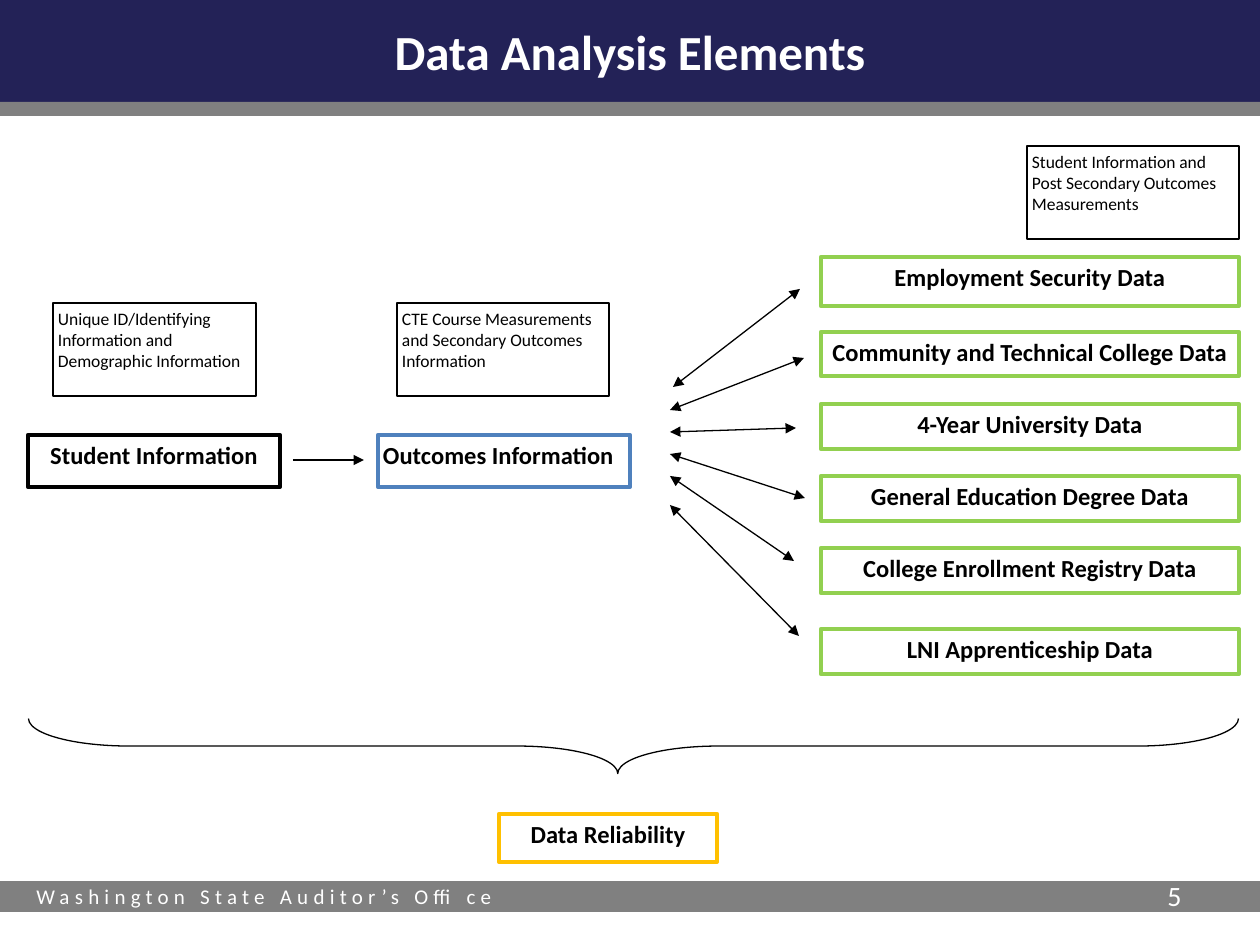
from pptx import Presentation
from pptx.dml.color import RGBColor
from pptx.enum.shapes import MSO_CONNECTOR, MSO_SHAPE
from pptx.enum.text import MSO_ANCHOR, PP_ALIGN
from pptx.oxml.ns import qn
from pptx.util import Pt
from lxml.etree import SubElement

SCALE = 914400 / 126
NAVY = RGBColor(0x23, 0x22, 0x57)
GRAY = RGBColor(0x80, 0x80, 0x80)
WHITE = RGBColor(0xFF, 0xFF, 0xFF)
BLACK = RGBColor(0x00, 0x00, 0x00)
BLUE = RGBColor(0x4F, 0x81, 0xBD)
AMBER = RGBColor(0xFF, 0xC0, 0x00)
GREEN = RGBColor(0x92, 0xD0, 0x50)
LEFT, CENTER = PP_ALIGN.LEFT, PP_ALIGN.CENTER

presentation = Presentation()
presentation.slide_width = round(1260 * SCALE)
presentation.slide_height = round(945 * SCALE)
slide = presentation.slides.add_slide(presentation.slide_layouts[6])


def add_box(bounds, fill=None, line=None, line_width=0.75, kind=MSO_SHAPE.RECTANGLE):
    shape = slide.shapes.add_shape(kind, *[round(value * SCALE) for value in bounds])
    shape.shadow.inherit = False
    if fill is None:
        shape.fill.background()
    else:
        shape.fill.solid()
        shape.fill.fore_color.rgb = fill
    if line is None:
        shape.line.fill.background()
    else:
        shape.line.color.rgb = line
        shape.line.width = Pt(line_width)
    return shape


def write(shape, text, size, color, bold=False, align=LEFT, anchor=MSO_ANCHOR.TOP, inset=None):
    frame = shape.text_frame
    frame.text = text
    frame.word_wrap = True
    frame.vertical_anchor = anchor
    if inset is not None:
        frame.margin_left = frame.margin_right = round(inset * SCALE)
        frame.margin_top = frame.margin_bottom = round(inset * SCALE)
    paragraph = frame.paragraphs[0]
    paragraph.alignment = align
    font = paragraph.runs[0].font
    font.name = "Calibri"
    font.size = Pt(size)
    font.bold = bold
    font.color.rgb = color


title_bar = add_box((0, 0, 1260, 102), NAVY)
write(title_bar, "Data Analysis Elements", 28, WHITE, True, CENTER, MSO_ANCHOR.MIDDLE)
add_box((0, 102, 1260, 14), GRAY)
add_box((0, 881, 1260, 31), GRAY)

footer = slide.shapes.add_textbox(*[round(value * SCALE) for value in (24, 877, 490, 38)])
write(footer, "Washington State Auditor’s Office", 12, WHITE)
footer.text_frame.word_wrap = False
footer.text_frame.paragraphs[0].runs[0].font._element.set("spc", "300")

page_number = slide.shapes.add_textbox(*[round(value * SCALE) for value in (1155, 872, 73, 50)])
write(page_number, "5", 16, WHITE)

data_boxes = [
    ("Student Information", (28, 435, 252, 52), BLACK, CENTER),
    ("Outcomes Information", (378, 435, 252, 52), BLUE, LEFT),
    ("Data Reliability", (499, 814, 218, 48), AMBER, CENTER),
]
sources = [
    ("Employment Security Data", 257, 49),
    ("Community and Technical College Data", 332, 44),
    ("4-Year University Data", 404, 45),
    ("General Education Degree Data", 476, 45),
    ("College Enrollment Registry Data", 548, 45),
    ("LNI Apprenticeship Data", 629, 45),
]
for text, top, height in sources:
    data_boxes.append((text, (821, top, 418, height), GREEN, CENTER))
for text, bounds, color, align in data_boxes:
    write(add_box(bounds, WHITE, color, 2.5), text, 14, BLACK, True, align, inset=5)

notes = [
    ("Unique ID/Identifying Information and Demographic Information", (53, 303, 203, 93)),
    ("CTE Course Measurements and Secondary Outcomes Information", (397, 303, 212, 93)),
    ("Student Information and Post Secondary Outcomes Measurements", (1027, 146, 212, 93)),
]
for text, bounds in notes:
    write(add_box(bounds, line=BLACK), text, 10, BLACK, inset=5)

arrows = [
    ((293, 460, 364, 460), ["tailEnd"]),
    *[(points, ["headEnd", "tailEnd"]) for points in [
        (673, 387, 800, 289),
        (670, 410, 804, 358),
        (670, 432, 796, 428),
        (670, 454, 805, 498),
        (670, 476, 794, 561),
        (670, 505, 799, 636),
    ]],
]
for points, ends in arrows:
    arrow = slide.shapes.add_connector(
        MSO_CONNECTOR.STRAIGHT, *[round(value * SCALE) for value in points])
    arrow.line.color.rgb = BLACK
    arrow.line.width = Pt(0.75)
    for end in ends:
        SubElement(arrow.line._get_or_add_ln(), qn(f"a:{end}"), type="triangle")
    SubElement(arrow._element.spPr, qn("a:effectLst"))

brace = add_box((606, 141, 55, 1210), line=BLACK, kind=MSO_SHAPE.LEFT_BRACE)
brace.rotation = 270
brace.adjustments[0] = 1.83
brace.adjustments[1] = 0.487

presentation.save("out.pptx")
